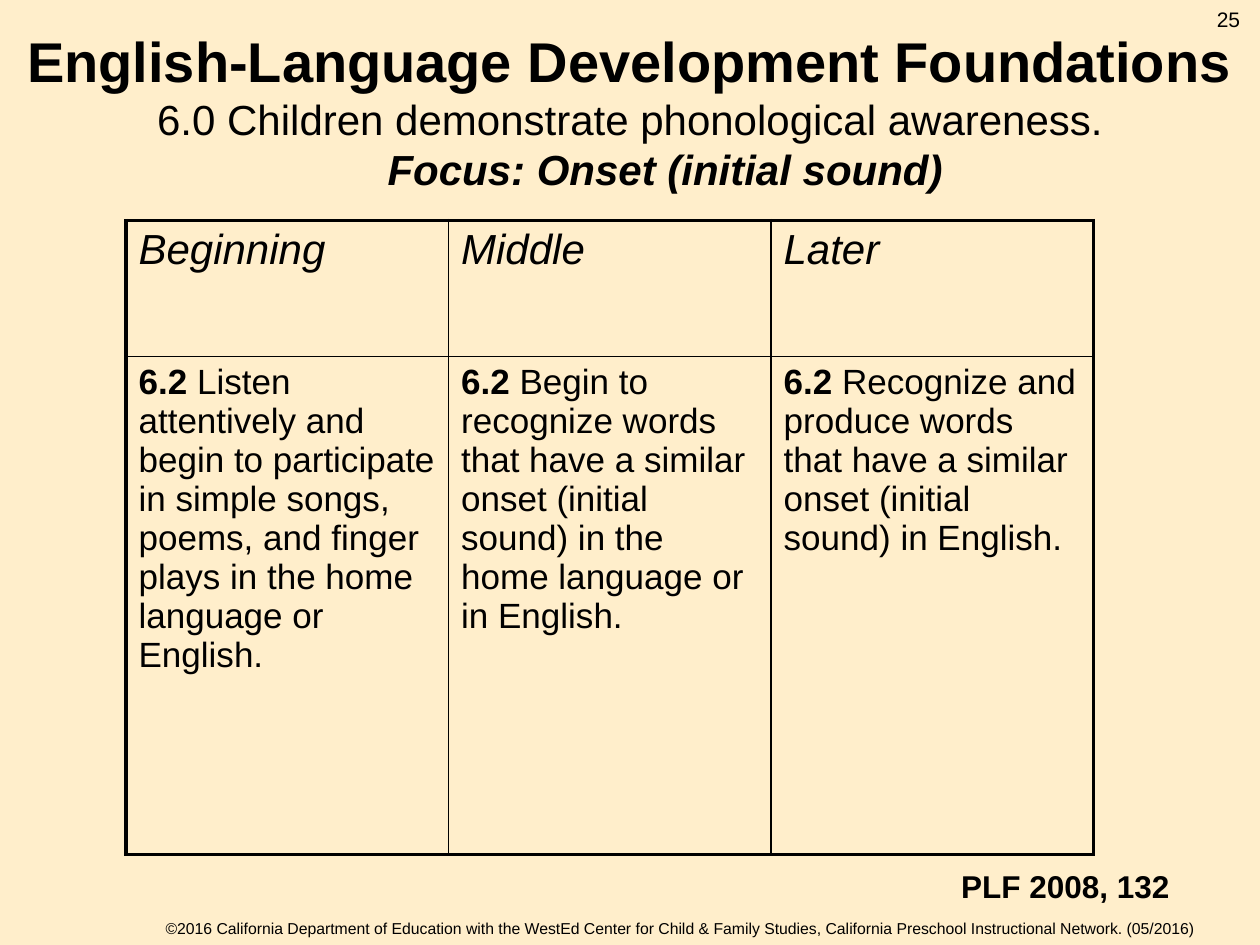
"""Build the slide on the onset focus of the English-language development foundations."""
from dataclasses import dataclass

from lxml.etree import SubElement
from pptx import Presentation
from pptx.dml.color import RGBColor
from pptx.enum.text import MSO_ANCHOR, PP_ALIGN
from pptx.oxml.ns import qn
from pptx.slide import Slide
from pptx.table import _Cell
from pptx.text.text import TextFrame, _Paragraph
from pptx.util import Inches, Pt

BLACK = RGBColor(0x00, 0x00, 0x00)
CREAM = RGBColor(0xFF, 0xEE, 0xCB)
FONT = "Arial"
THICK, THIN = Pt(2.25), Pt(1)
COLUMN_WIDTH = 2.56
ROW_HEIGHTS = (1.08, 3.95)


@dataclass(frozen=True)
class Span:
    text: str
    size: float
    bold: bool = False
    italic: bool = False


@dataclass(frozen=True)
class Line:
    spans: tuple[Span, ...]
    indent: float = 0


@dataclass(frozen=True)
class Label:
    left: float
    top: float
    width: float
    height: float
    lines: tuple[Line, ...]
    align: PP_ALIGN = PP_ALIGN.CENTER
    anchor: MSO_ANCHOR = MSO_ANCHOR.TOP
    wrap: bool = True


@dataclass(frozen=True)
class Stage:
    name: str
    description: str


LABELS = (
    Label(0.79, 7.24, 9.21, 0.25, (Line((Span(
        "©2016 California Department of Education with the WestEd Center for Child & Family Studies, "
        "California Preschool Instructional Network. (05/2016)", 9),)),), anchor=MSO_ANCHOR.MIDDLE),
    Label(9.5, 0, 0.5, 0.4, (Line((Span("25", 12),)),)),
    Label(0, 0.25, 10, 1.25, (
        Line((Span("English-Language Development Foundations", 32, bold=True),)),
        Line((Span("6.0 Children demonstrate phonological awareness.", 24),)),
        Line((Span("Focus: Onset (initial sound)", 24, bold=True, italic=True),), indent=0.56),
    ), anchor=MSO_ANCHOR.MIDDLE),
    Label(7.53, 6.83, 1.87, 0.4, (Line((Span("PLF 2008, 132", 18, bold=True),)),),
          align=PP_ALIGN.LEFT, wrap=False),
)

STAGES = (
    Stage("Beginning", "Listen attentively and begin to participate in simple songs, poems, "
                       "and finger plays in the home language or English."),
    Stage("Middle", "Begin to recognize words that have a similar onset (initial sound) "
                    "in the home language or in English."),
    Stage("Later", "Recognize and produce words that have a similar onset (initial sound) in English."),
)


def write_spans(paragraph: _Paragraph, spans: tuple[Span, ...]) -> None:
    for span in spans:
        run = paragraph.add_run()
        run.text = span.text
        run.font.name = FONT
        run.font.size = Pt(span.size)
        run.font.bold = span.bold
        run.font.italic = span.italic
        run.font.color.rgb = BLACK


def write_lines(text_frame: TextFrame, lines: tuple[Line, ...], align: PP_ALIGN) -> None:
    for index, line in enumerate(lines):
        paragraph = text_frame.add_paragraph() if index else text_frame.paragraphs[0]
        paragraph.alignment = align
        if line.indent:
            paragraph._p.get_or_add_pPr().set("marL", str(Inches(line.indent)))
        write_spans(paragraph, line.spans)


def add_label(slide: Slide, label: Label) -> None:
    shape = slide.shapes.add_textbox(
        Inches(label.left), Inches(label.top), Inches(label.width), Inches(label.height))
    text_frame = shape.text_frame
    text_frame.word_wrap = label.wrap
    text_frame.vertical_anchor = label.anchor
    write_lines(text_frame, label.lines, label.align)


def set_borders(cell: _Cell, thick_sides: str) -> None:
    cell.fill.background()
    properties = cell._tc.get_or_add_tcPr()
    for position, side in enumerate("LRTB"):
        border = SubElement(properties, qn(f"a:ln{side}"))
        border.set("w", str(THICK if side in thick_sides else THIN))
        color = SubElement(SubElement(border, qn("a:solidFill")), qn("a:srgbClr"))
        color.set("val", str(BLACK))
        properties.insert(position, border)


def add_stage_table(slide: Slide, stages: tuple[Stage, ...]) -> None:
    frame = slide.shapes.add_table(
        len(ROW_HEIGHTS), len(stages), Inches(1), Inches(1.75),
        Inches(COLUMN_WIDTH * len(stages)), Inches(sum(ROW_HEIGHTS)))
    table = frame.table
    table.first_row = table.horz_banding = False
    for row, height in zip(table.rows, ROW_HEIGHTS):
        row.height = Inches(height)
    for column, stage in enumerate(stages):
        table.columns[column].width = Inches(COLUMN_WIDTH)
        contents = (
            (Span(stage.name, 24, italic=True),),
            (Span("6.2", 20, bold=True), Span(f" {stage.description}", 20)),
        )
        outer_side = {0: "L", len(stages) - 1: "R"}.get(column, "")
        for row, (spans, edge) in enumerate(zip(contents, "TB")):
            cell = table.cell(row, column)
            write_spans(cell.text_frame.paragraphs[0], spans)
            set_borders(cell, outer_side + edge)


def main() -> None:
    presentation = Presentation()
    presentation.slide_width = Inches(10)
    presentation.slide_height = Inches(7.5)
    slide = presentation.slides.add_slide(presentation.slide_layouts[6])
    background = slide.background.fill
    background.solid()
    background.fore_color.rgb = CREAM
    for label in LABELS:
        add_label(slide, label)
    add_stage_table(slide, STAGES)
    presentation.save("out.pptx")


if __name__ == "__main__":
    main()
